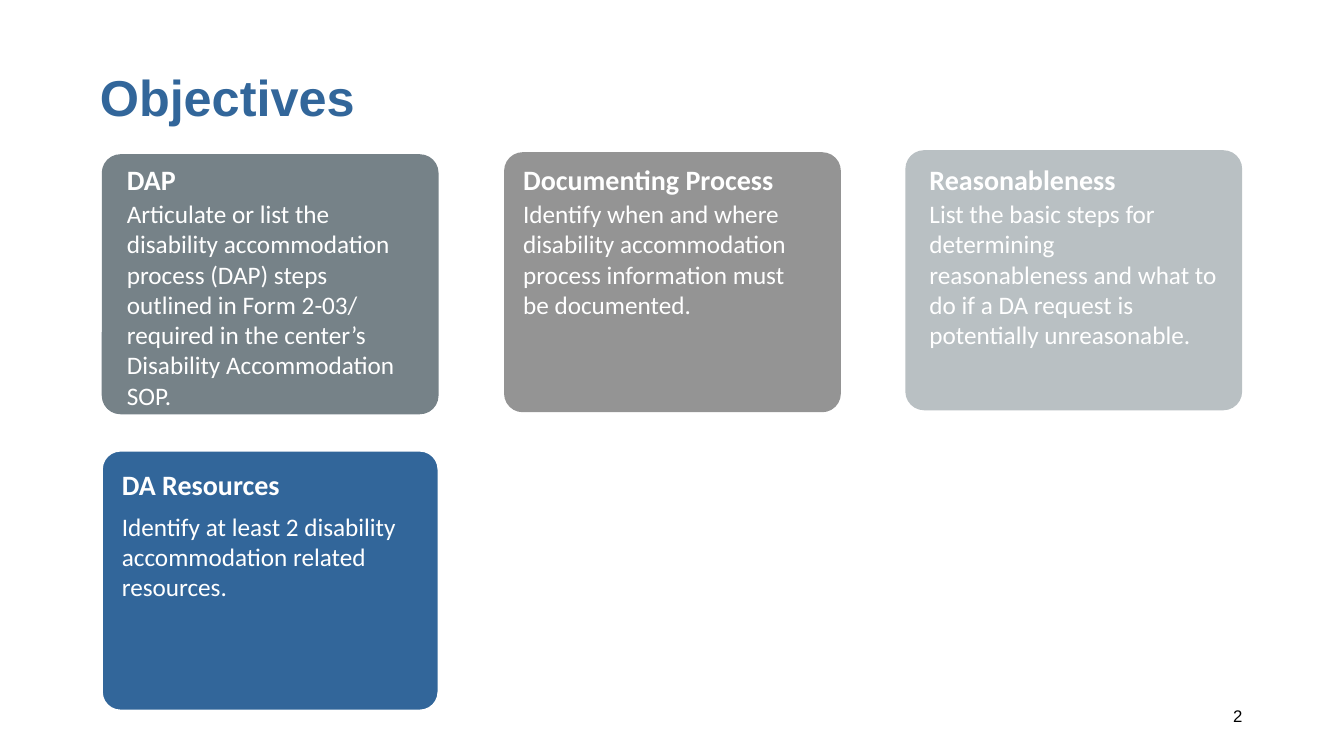
from pptx import Presentation
from pptx.dml.color import RGBColor
from pptx.enum import shapes, text
from pptx.util import Inches, Pt

COLORS = {
    "blue": "32669A",
    "slate": "768288",
    "gray": "949494",
    "silver": "B9C0C3",
    "white": "FFFFFF",
    "black": "000000",
}
CARD_WIDTH, CARD_HEIGHT = 3.34, 2.58

# heading, description, fill, card (left, top), text left, heading top, description top, text width
objectives = [
    ("DAP",
     "Articulate or list the disability accommodation process (DAP) steps outlined in "
     "Form 2-03/ required in the center’s Disability Accommodation SOP.",
     "slate", (1.01, 1.53), 1.16, 1.56, 1.92, 3.05),
    ("Documenting Process",
     "Identify when and where disability accommodation process information must be documented.",
     "gray", (5, 1.51), 5.09, 1.56, 1.92, 3.05),
    ("Reasonableness",
     "List the basic steps for determining reasonableness and what to do if a DA request "
     "is potentially unreasonable.",
     "silver", (8.98, 1.49), 9.12, 1.56, 1.92, 3.05),
    ("DA Resources",
     "Identify at least 2 disability accommodation related resources.",
     "blue", (1.01, 4.47), 1.11, 4.59, 5.02, 2.98),
]


def write(shape, words, size, font, color, bold=False, align=text.PP_ALIGN.LEFT):
    """Fill the shape with one wrapped, formatted paragraph."""
    frame = shape.text_frame
    frame.text = words
    frame.word_wrap = True
    paragraph = frame.paragraphs[0]
    paragraph.alignment = align
    run_font = paragraph.runs[0].font
    run_font.size = Pt(size)
    run_font.name = font
    run_font.bold = bold
    run_font.color.rgb = RGBColor.from_string(COLORS[color])


def add_text(left, top, width, height, *style, **options):
    box = slide.shapes.add_textbox(Inches(left), Inches(top), Inches(width), Inches(height))
    write(box, *style, **options)


prs = Presentation()
prs.slide_width = Inches(13.33)
prs.slide_height = Inches(7.5)
slide = prs.slides.add_slide(prs.slide_layouts[5])

title = slide.shapes.title
title.left, title.top = Inches(0.89), Inches(0.6)
title.width, title.height = Inches(9.9), Inches(0.71)
write(title, "Objectives", 36, "Arial", "blue", bold=True)

for heading, description, fill, (left, top), text_left, heading_top, description_top, width in objectives:
    card = slide.shapes.add_shape(
        shapes.MSO_SHAPE.ROUNDED_RECTANGLE,
        Inches(left), Inches(top), Inches(CARD_WIDTH), Inches(CARD_HEIGHT))
    card.adjustments[0] = 0.072
    card.shadow.inherit = False
    card.fill.solid()
    card.fill.fore_color.rgb = RGBColor.from_string(COLORS[fill])
    if fill == "blue":
        card.line.color.rgb = RGBColor.from_string(COLORS["white"])
        card.line.width = Pt(1.5)
    else:
        card.line.fill.background()
    add_text(text_left, description_top, width, 2.22 if heading == "DAP" else 1.31,
             description, 18, "Calibri", "white")
    add_text(text_left, heading_top, 3.05, 0.44, heading, 20, "Calibri", "white", bold=True)

add_text(9.42, 6.95, 3, 0.4, "2", 12, "Arial", "black", align=text.PP_ALIGN.RIGHT)

prs.save("out.pptx")
